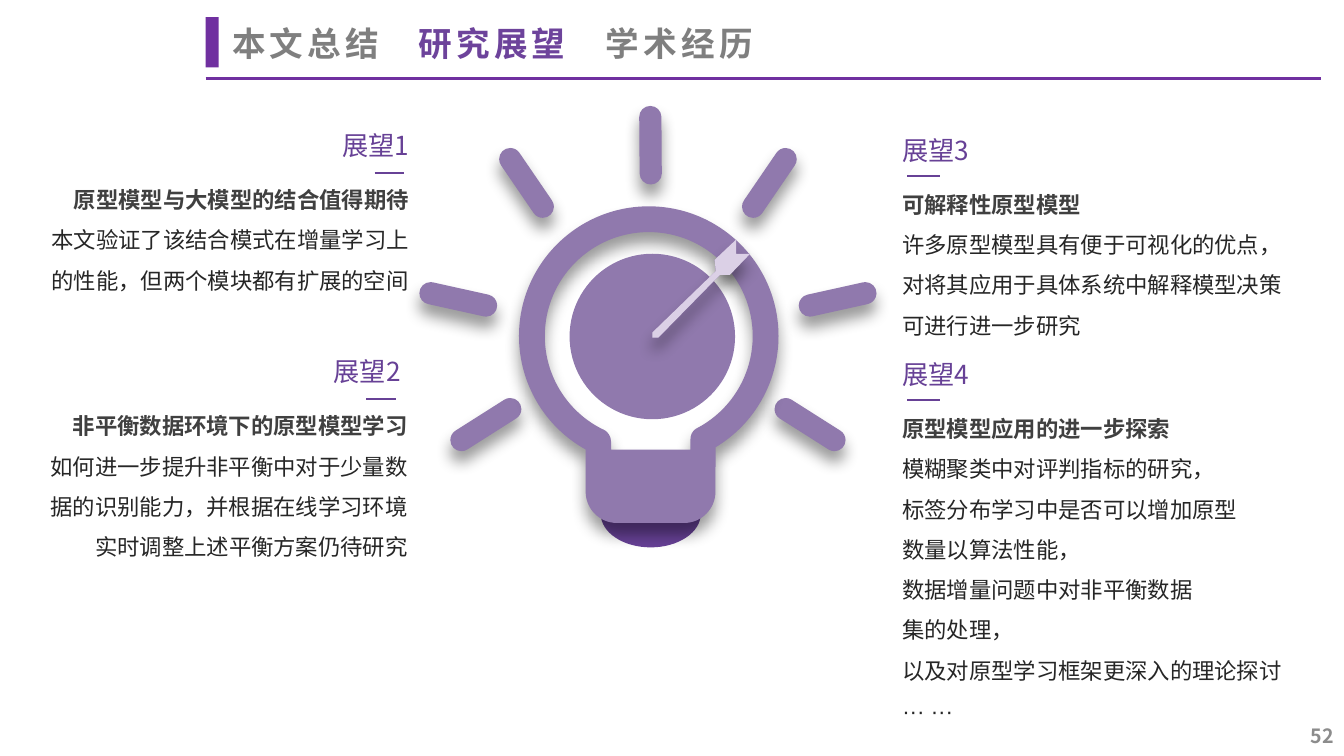
import math

from lxml import etree
from pptx import Presentation
from pptx import util as u
from pptx.dml.color import RGBColor
from pptx.enum import shapes, text
from pptx.oxml.ns import qn

PURPLE = RGBColor(0x70, 0x30, 0xA0)
INDIGO = RGBColor(0x67, 0x41, 0x96)
VIOLET = RGBColor(0x90, 0x79, 0xAD)
PALE = RGBColor(0xDB, 0xD0, 0xE6)
ACTIVE = RGBColor(0x6D, 0x43, 0x9B)
GREY = RGBColor(0x7F, 0x7F, 0x7F)
NUMBER_GREY = RGBColor(0x8C, 0x8C, 0x8C)
LEAD = RGBColor(0x40, 0x40, 0x40)
BODY = RGBColor(0x26, 0x26, 0x26)
CJK = "Noto Sans CJK SC"
LEFT, RIGHT = text.PP_ALIGN.LEFT, text.PP_ALIGN.RIGHT

OUTLOOKS = [
    (0.98, 3.14, 9.58, 3.23, RIGHT, 0, "展望1",
     ["原型模型与大模型的结合值得期待",
      "本文验证了该结合模式在增量学习上的性能，但两个模块都有扩展的空间"]),
    (0.95, 8.84, 9.58, 4.24, RIGHT, 0.18, "展望2",
     ["非平衡数据环境下的原型模型学习",
      "如何进一步提升非平衡中对于少量数据的识别能力，并根据在线学习环境实时调整上述平衡方案仍待研究"]),
    (22.49, 3.26, 10.41, 4.24, LEFT, 0, "展望3",
     ["可解释性原型模型",
      "许多原型模型具有便于可视化的优点，对将其应用于具体系统中解释模型决策可进行进一步研究"]),
    (22.49, 8.91, 10.41, 8.33, LEFT, 0, "展望4",
     ["原型模型应用的进一步探索", "模糊聚类中对评判指标的研究，",
      "标签分布学习中是否可以增加原型", "数量以算法性能，",
      "数据增量问题中对非平衡数据", "集的处理，",
      "以及对原型学习框架更深入的理论探讨", "··· ···"]),
]
RAYS = [((2.63, -3.26), (3.45, -4.46)), ((4.06, -0.77), (5.46, -1.08)),
        ((3.45, 1.84), (4.68, 2.62))]
DART = [(1.79, -1.54), (2.04, -1.54), (2.55, -2.07), (2.2, -2.07), (2.2, -2.43),
        (1.66, -1.92), (1.69, -1.64), (0.09, -0.09), (0.09, 0.04), (0.24, 0.04)]


def add_span(para, words, *, size, color, bold=False, font=CJK, spacing=0):
    """Append formatted words to a paragraph."""
    span = para.add_run()
    span.text = words
    span.font.size = u.Pt(size)
    span.font.bold = bold
    span.font.name = font
    span.font.color.rgb = color
    props = span.font._element
    etree.SubElement(props, qn("a:ea")).set("typeface", CJK)
    if spacing:
        props.set("spc", str(spacing * 100))


def add_box(page, left, top, width, height, *, middle=False, grow=False):
    """Add a wrapping text box and return its frame."""
    box = page.shapes.add_textbox(u.Cm(left), u.Cm(top), u.Cm(width), u.Cm(height))
    frame = box.text_frame
    frame.word_wrap = True
    if middle:
        frame.vertical_anchor = text.MSO_ANCHOR.MIDDLE
    if grow:
        frame.auto_size = text.MSO_AUTO_SIZE.SHAPE_TO_FIT_TEXT
    return frame


def add_rule(page, left, top, length, *, color, weight):
    """Draw a horizontal line."""
    rule = page.shapes.add_connector(shapes.MSO_CONNECTOR.STRAIGHT, u.Cm(left),
                                     u.Cm(top), u.Cm(left + length), u.Cm(top))
    rule.line.color.rgb = color
    rule.line.width = u.Pt(weight)
    etree.SubElement(rule._element.spPr, qn("a:effectLst"))


def paint(shape, color, shadow=False):
    """Fill a shape, drop its outline and give it a soft shadow if asked."""
    shape.fill.solid()
    shape.fill.fore_color.rgb = color
    shape.line.fill.background()
    shape.shadow.inherit = False
    if shadow:
        effects = shape._element.spPr.find(qn("a:effectLst"))
        outer = etree.SubElement(effects, qn("a:outerShdw"), blurRad=str(u.Pt(11)),
                                 dist=str(u.Pt(8)), dir="5400000", algn="t",
                                 rotWithShape="0")
        tone = etree.SubElement(outer, qn("a:srgbClr"), val="000000")
        etree.SubElement(tone, qn("a:alpha"), val="40000")


def lines_to(points):
    """Turn points into straight steps."""
    return [(point,) for point in points]


def arc(x, y, radius, start, end, *, flat=1):
    """List a line to the start of an arc and its curves, split at the quadrants."""
    def spot(angle, reach):
        turn = math.radians(angle)
        across = radius * (math.cos(turn) - reach * math.sin(turn))
        down = radius * flat * (math.sin(turn) + reach * math.cos(turn))
        return x + across, y + down

    first, last = math.floor(start / 90) + 1, math.ceil(end / 90)
    stops = [start, *(90 * quarter for quarter in range(first, last)), end]
    steps = [(spot(start, 0),)]
    for near, far in zip(stops, stops[1:]):
        reach = 4 / 3 * math.tan(math.radians(far - near) / 4)
        steps.append((spot(near, reach), spot(far, -reach), spot(far, 0)))
    return steps


def add_outline(page, center, contours, *, color, shadow=False):
    """Build a closed shape from steps of one point (line) or three (curve)."""
    placed = [[(u.Cm(center[0] + x), u.Cm(center[1] + y)) for step in contour
               for x, y in step] for contour in contours]
    builder = page.shapes.build_freeform(*placed[0][0], scale=1.0)
    builder.add_line_segments(placed[0][1:], close=True)
    for contour in placed[1:]:
        builder.move_to(*contour[0])
        builder.add_line_segments(contour[1:], close=True)
    shape = builder.convert_to_shape()
    segments = shape._element.iter(qn("a:lnTo"))
    queue = iter(list(segments))
    for contour in contours:
        for step in contour[1:]:
            group = [next(queue) for point in step]
            if len(group) == 3:
                curve = etree.Element(qn("a:cubicBezTo"))
                group[0].addprevious(curve)
                for segment in group:
                    curve.append(segment[0])
                    segment.getparent().remove(segment)
    paint(shape, color, shadow)


def capsule(start, end, radius=0.28):
    """List the steps around a round-ended bar."""
    angle = math.degrees(math.atan2(end[1] - start[1], end[0] - start[0]))
    return (arc(*end, radius, angle - 90, angle + 90)
            + arc(*start, radius, angle + 90, angle + 270))


def draw_lamp(page, left, top):
    """Draw the light bulb with its rays, target and dart."""
    center = (left + 5.83, top + 5.8)
    add_outline(page, center, [arc(0.05, 4.48, 1.26, 0, 180, flat=0.67)], color=INDIGO)
    mirrored = [tuple((-x - 0.04, y) for x, y in ray) for ray in RAYS]
    for ray in RAYS + [((0.05, -4.1), (0.04, -5.52))] + mirrored:
        add_outline(page, center, [capsule(*ray)], color=VIOLET, shadow=True)
    glass = (arc(0, 0, 3.27, 119.1, 419)
             + arc(0.89, 3.92, 0.79, 0, 90) + arc(-0.8, 3.92, 0.79, 90, 180))
    hollow = arc(0, 0, 2.62, 116, 423) + [
        ((1.1, 2.39), (1.05, 2.49), (1.05, 2.61)), *lines_to([(1.05, 2.86),
        (-0.95, 2.86), (-0.95, 2.66)]), ((-0.95, 2.53), (-1.03, 2.4), (-1.15, 2.35))]
    add_outline(page, center, [glass, hollow], color=VIOLET, shadow=True)
    for size in (4.17, 3.35, 2.64, 1.85, 1.17, 0.43):
        ring = page.shapes.add_shape(
            shapes.MSO_SHAPE.OVAL, u.Cm(center[0] + 0.09 - size / 2),
            u.Cm(center[1] + 0.01 - size / 2), u.Cm(size), u.Cm(size))
        paint(ring, VIOLET)
    for color, shadow in ((VIOLET, True), (PALE, False)):
        add_outline(page, center, [lines_to(DART)], color=color, shadow=shadow)


def draw_outlook(page, left, top, width, height, align, shift, title, lines):
    """Place a heading, its short rule and the text below it."""
    if align == RIGHT:
        head_width, length, drop = 4.72, 0.74, 1.22
        head_left = left + width - head_width - shift
        rule_left = head_left + head_width - 0.38 - length
    else:
        head_width, length, drop = 5.13, 0.81, 1.18
        head_left, rule_left = left, left + 0.38
    para = add_box(page, head_left, top, head_width, 1.07, grow=True).paragraphs[0]
    para.alignment = align
    add_span(para, title, size=18.7, color=INDIGO)
    add_rule(page, rule_left, top + drop, length, color=INDIGO, weight=1.5)
    frame = add_box(page, left, top + 1.09, width, height, grow=True)
    for index, line in enumerate(lines):
        para = frame.add_paragraph() if index else frame.paragraphs[0]
        para.alignment = align
        para.line_spacing = 1.5
        add_span(para, line, size=16, font="Arial", bold=index == 0,
                 color=BODY if index else LEAD)


def draw_header(page, left, top, width):
    """Draw the section bar with the current section highlighted."""
    add_rule(page, left, top + 1.55, width, color=PURPLE, weight=2.25)
    marker = page.shapes.add_shape(shapes.MSO_SHAPE.RECTANGLE, u.Cm(left), u.Cm(top),
                                   u.Cm(0.33), u.Cm(1.27))
    paint(marker, PURPLE)
    para = add_box(page, left + 0.42, top + 0.1, width - 0.1, 1.24,
                   middle=True).paragraphs[0]
    para.line_spacing = 0.9
    stops = etree.SubElement(para._p.get_or_add_pPr(), qn("a:tabLst"))
    for stop in (4.7, 9.42):
        etree.SubElement(stops, qn("a:tab"), pos=str(u.Cm(stop)), algn="l")
    for words, color in (("本文总结\t", GREY), ("研究展望\t", ACTIVE), ("学术经历", GREY)):
        add_span(para, words, size=24, color=color, bold=True, spacing=3)


def draw_number(page, left, top, width, height):
    """Write the page number."""
    para = add_box(page, left, top, width, height, middle=True).paragraphs[0]
    para.alignment = RIGHT
    add_span(para, "52", size=14, color=NUMBER_GREY, bold=True)


def main():
    """Build and save the deck."""
    deck = Presentation()
    deck.slide_width, deck.slide_height = u.Cm(33.87), u.Cm(19.05)
    page = deck.slides.add_slide(deck.slide_layouts[6])
    draw_header(page, 5.18, 0.43, 28.12)
    draw_lamp(page, 10.52, 2.67)
    for outlook in OUTLOOKS:
        draw_outlook(page, *outlook)
    draw_number(page, 26.24, 18.03, 7.62, 1.02)
    deck.save("out.pptx")


if __name__ == "__main__":
    main()
